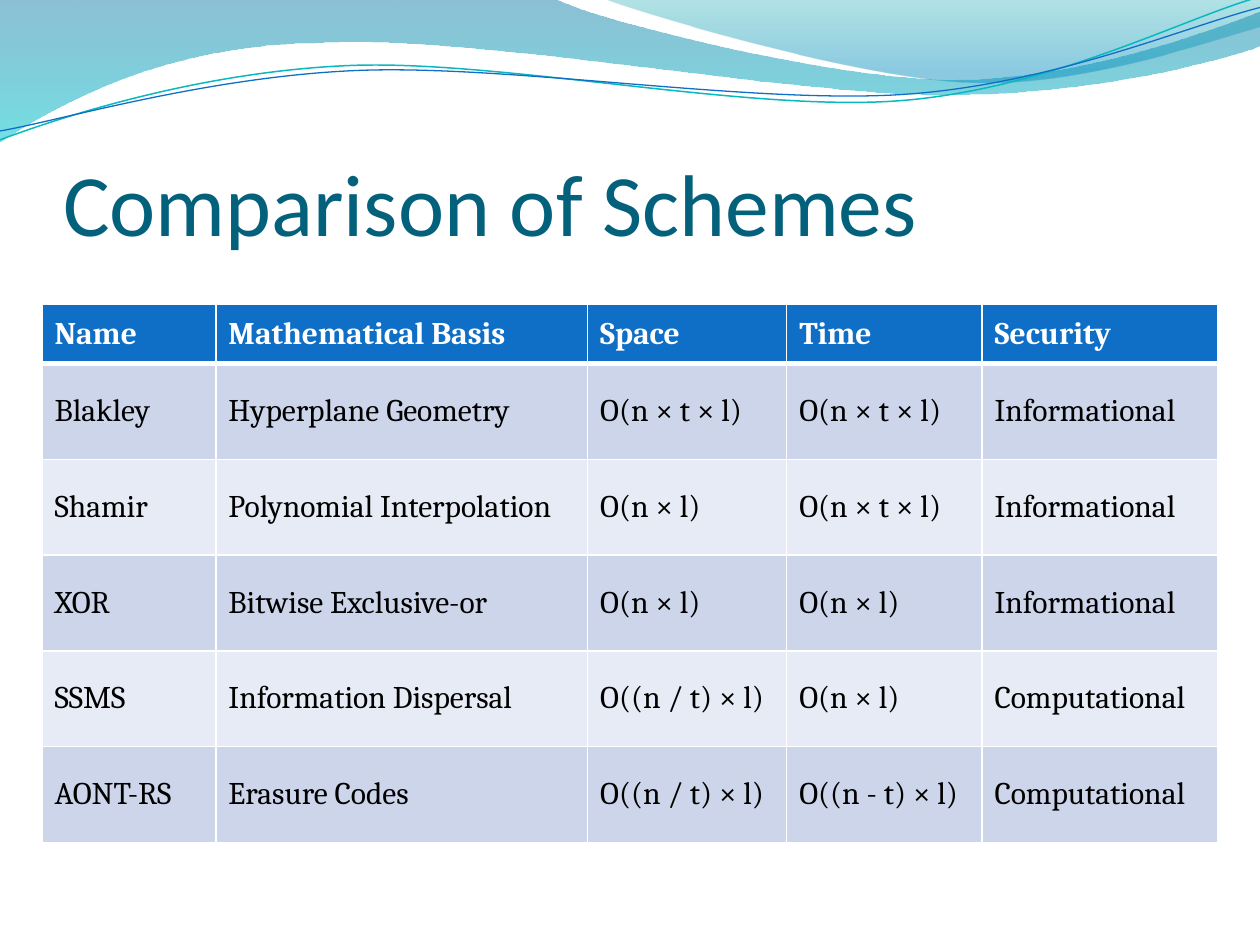
import math
from dataclasses import dataclass

import pptx
import pptx.dml.color
import pptx.enum.text
import pptx.oxml
import pptx.oxml.ns
import pptx.util

COLUMN = ROW = pptx.util.Inches(1)
SLIDE_COLUMNS, SLIDE_ROWS = 10, 7.5
WHITE, BLACK, BLUE, TEAL = "FFFFFF", "000000", "0F6FC6", "0AB8BF"
BANDS = ("CCD5EA", "E7EBF5")
LINE_ROTATION = 357.3


@dataclass(frozen=True)
class Stop:
    position: float
    color: str
    opacity: int


@dataclass(frozen=True)
class Wave:
    start: tuple
    segments: tuple
    stops: tuple = ()
    line_color: str = ""
    line_width: float = 0
    rotation: float = 0
    pivot: tuple = (0, 0)


WAVES = (
    Wave((0, -0.01), (
        (4.4, -0.01),
        (4.76, 0.17, 6.64, 0.63, 7.58, 0.63),
        (8.53, 0.63, 9.58, 0.26, 10, 0.09),
        (10.01, 0.36),
        (9.83, 0.44, 8.7, 0.76, 7.46, 0.75),
        (6.22, 0.75, 3.82, 0.28, 2.57, 0.34),
        (1.29, 0.35, 0.46, 0.83, -0.01, 1.13),
        (0, -0.01),
    ), stops=(Stop(0, "0074A1", 45), Stop(1, "00C6CF", 55))),
    Wave((4.79, -0.01), (
        (5.09, 0.11, 6.82, 0.62, 7.69, 0.65),
        (8.56, 0.69, 9.61, 0.32, 10, 0.21),
        (10, 0),
        (4.79, -0.01),
    ), stops=(Stop(0, "00A1A9", 30), Stop(0.8, "008BBF", 45))),
    Wave((0, 1.11), (
        (0.48, 0.93, 1.58, 0.57, 2.77, 0.52),
        (3.95, 0.47, 5.93, 0.89, 7.13, 0.8),
        (8.33, 0.71, 9.38, 0.15, 9.98, -0.02),
    ), line_color=TEAL, line_width=0.85, rotation=LINE_ROTATION, pivot=(4.99, 0.58)),
    Wave((0, 1.04), (
        (0.47, 0.96, 1.64, 0.61, 2.83, 0.56),
        (4.03, 0.51, 5.97, 0.83, 7.17, 0.75),
        (8.36, 0.67, 9.41, 0.21, 10, 0.06),
    ), line_color=BLUE, line_width=0.75, rotation=LINE_ROTATION, pivot=(5, 0.59)),
)

TABLE_LEFT, TABLE_TOP = 1 / 3, 29 / 12
TABLE_COLUMNS = (1.38, 2.95, 1.58, 1.55, 1.87)
HEADER_HEIGHT, BODY_HEIGHT = 0.47, 0.76
SCHEMES = (
    ("Name", "Mathematical Basis", "Space", "Time", "Security"),
    ("Blakley", "Hyperplane Geometry", "O(n × t × l)", "O(n × t × l)", "Informational"),
    ("Shamir", "Polynomial Interpolation", "O(n × l)", "O(n × t × l)", "Informational"),
    ("XOR", "Bitwise Exclusive-or", "O(n × l)", "O(n × l)", "Informational"),
    ("SSMS", "Information Dispersal", "O((n / t) × l)", "O(n × l)", "Computational"),
    ("AONT-RS", "Erasure Codes", "O((n / t) × l)", "O((n - t) × l)", "Computational"),
)


def rgb(color: str) -> pptx.dml.color.RGBColor:
    return pptx.dml.color.RGBColor.from_string(color)


def across(columns: float) -> int:
    return round(columns * COLUMN)


def down(rows: float) -> int:
    return round(rows * ROW)


def format_text(paragraph, font_name: str, size: float, color: str, bold: bool = False) -> None:
    paragraph.alignment = pptx.enum.text.PP_ALIGN.LEFT
    font = paragraph.font
    font.name, font.size, font.bold = font_name, pptx.util.Pt(size), bold
    font.color.rgb = rgb(color)


def unrotated(wave: Wave, point: tuple) -> tuple:
    angle = math.radians(-wave.rotation)
    x, y = point[0] - wave.pivot[0], point[1] - wave.pivot[1]
    return (
        across(wave.pivot[0] + x * math.cos(angle) - y * math.sin(angle)),
        down(wave.pivot[1] + x * math.sin(angle) + y * math.cos(angle)),
    )


def bend_segments(shape, segments: tuple) -> None:
    lines = iter(list(shape._element.spPr.iter(pptx.oxml.ns.qn("a:lnTo"))))
    for segment in segments:
        line = next(lines)
        if len(segment) == 6:
            curve = pptx.oxml.parse_xml(f'<a:cubicBezTo {pptx.oxml.ns.nsdecls("a")}/>')
            line.addprevious(curve)
            for control in (line, next(lines), next(lines)):
                curve.append(control[0])
                control.getparent().remove(control)


def fill_gradient(shape, stops: tuple) -> None:
    shape.fill.gradient()
    shape.fill.gradient_angle = 270
    for gradient_stop, stop in zip(shape.fill.gradient_stops, stops):
        gradient_stop.position = stop.position
        gradient_stop.color.rgb = rgb(stop.color)
    colors = shape._element.spPr.iter(pptx.oxml.ns.qn("a:srgbClr"))
    for color, stop in zip(list(colors), stops):
        color.append(pptx.oxml.parse_xml(
            f'<a:alpha {pptx.oxml.ns.nsdecls("a")} val="{stop.opacity * 1000}"/>'
        ))


def draw_wave(slide, wave: Wave) -> None:
    points = [unrotated(wave, segment[index:index + 2])
              for segment in wave.segments for index in range(0, len(segment), 2)]
    builder = slide.shapes.build_freeform(*unrotated(wave, wave.start), scale=1.0)
    builder.add_line_segments(points, close=bool(wave.stops))
    shape = builder.convert_to_shape()
    bend_segments(shape, wave.segments)
    shape.rotation = wave.rotation
    shape.shadow.inherit = False
    if wave.stops:
        fill_gradient(shape, wave.stops)
        shape.line.fill.background()
    else:
        shape.fill.background()
        shape.line.color.rgb = rgb(wave.line_color)
        shape.line.width = pptx.util.Pt(wave.line_width)


def draw_title(slide, text: str) -> None:
    title = slide.shapes.title
    slide.shapes._spTree.append(title._element)
    title.left, title.top = across(0.5), down(0.77)
    title.width, title.height = across(9), down(1.25)
    frame = title.text_frame
    frame.text = text
    frame.word_wrap = True
    frame.auto_size = pptx.enum.text.MSO_AUTO_SIZE.NONE
    frame.vertical_anchor = pptx.enum.text.MSO_ANCHOR.BOTTOM
    frame.margin_left = frame.margin_right = frame.margin_bottom = 0
    frame.margin_top = down(0.05)
    format_text(frame.paragraphs[0], "Calibri", 50, "04617B")


def draw_borders(cell, widths: dict) -> None:
    properties = cell._tc.get_or_add_tcPr()
    for index, (side, width) in enumerate(widths.items()):
        properties.insert(index, pptx.oxml.parse_xml(
            f'<a:{side} {pptx.oxml.ns.nsdecls("a")} w="{pptx.util.Pt(width)}">'
            f'<a:solidFill><a:srgbClr val="{WHITE}"/></a:solidFill></a:{side}>'
        ))


def draw_table(slide, rows: tuple) -> None:
    heights = [HEADER_HEIGHT] + [BODY_HEIGHT] * (len(rows) - 1)
    table = slide.shapes.add_table(
        len(rows), len(TABLE_COLUMNS), across(TABLE_LEFT), down(TABLE_TOP),
        across(sum(TABLE_COLUMNS)), down(sum(heights)),
    ).table
    for column, width in zip(table.columns, TABLE_COLUMNS):
        column.width = across(width)
    for row_index, (texts, height) in enumerate(zip(rows, heights)):
        table.rows[row_index].height = down(height)
        header = row_index == 0
        for column_index, text in enumerate(texts):
            cell = table.cell(row_index, column_index)
            cell.text = text
            cell.vertical_anchor = pptx.enum.text.MSO_ANCHOR.MIDDLE
            cell.fill.solid()
            cell.fill.fore_color.rgb = rgb(BLUE if header else BANDS[(row_index - 1) % 2])
            format_text(cell.text_frame.paragraphs[0], "Cambria", 18,
                        WHITE if header else BLACK, header)
            draw_borders(cell, {"lnL": 1, "lnR": 1, "lnT": 3 if row_index == 1 else 1,
                                "lnB": 3 if header else 1})


def main() -> None:
    presentation = pptx.Presentation()
    presentation.slide_width = across(SLIDE_COLUMNS)
    presentation.slide_height = down(SLIDE_ROWS)
    slide = presentation.slides.add_slide(presentation.slide_layouts.get_by_name("Title Only"))
    for wave in WAVES:
        draw_wave(slide, wave)
    draw_title(slide, "Comparison of Schemes")
    draw_table(slide, SCHEMES)
    presentation.save("out.pptx")


if __name__ == "__main__":
    main()
